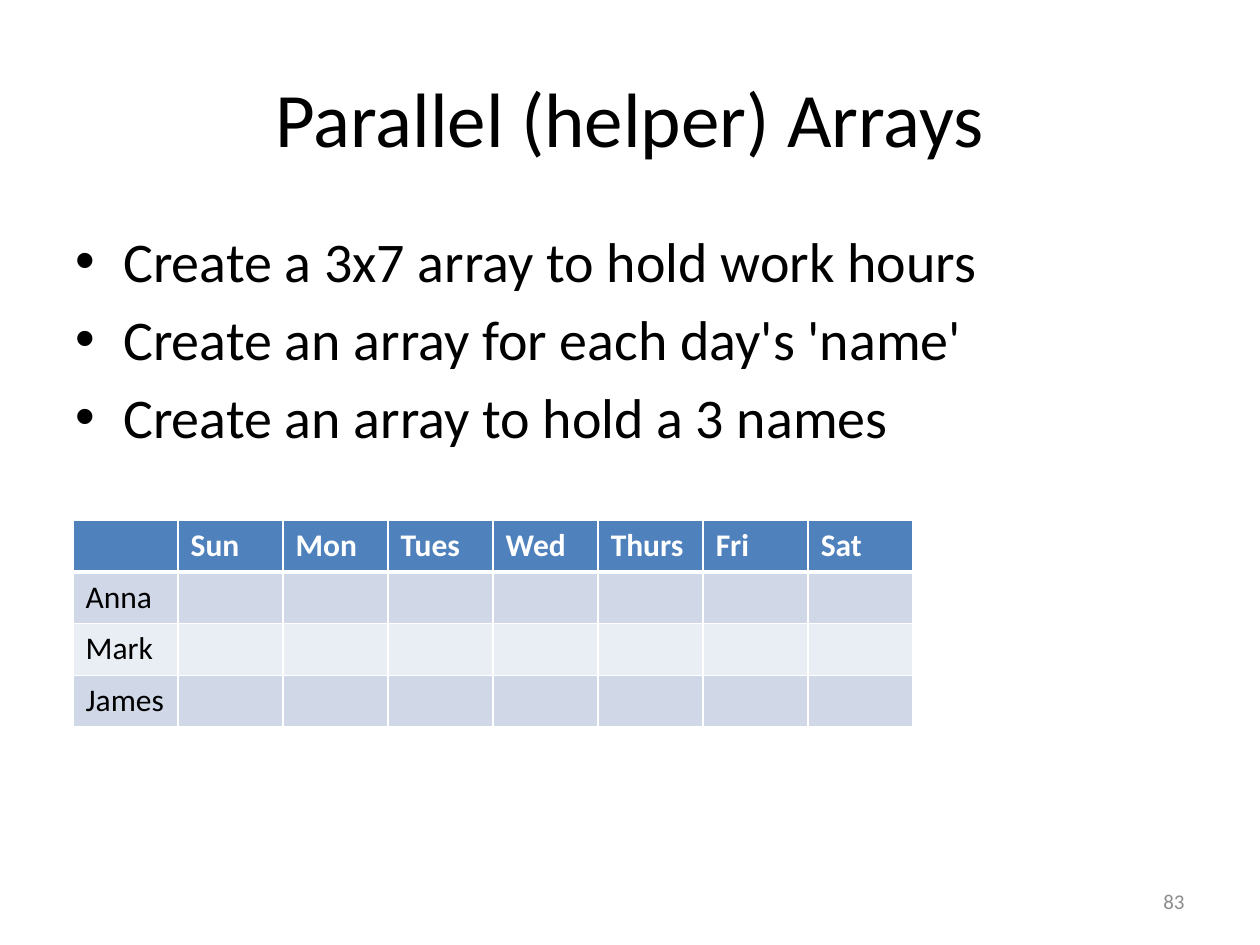
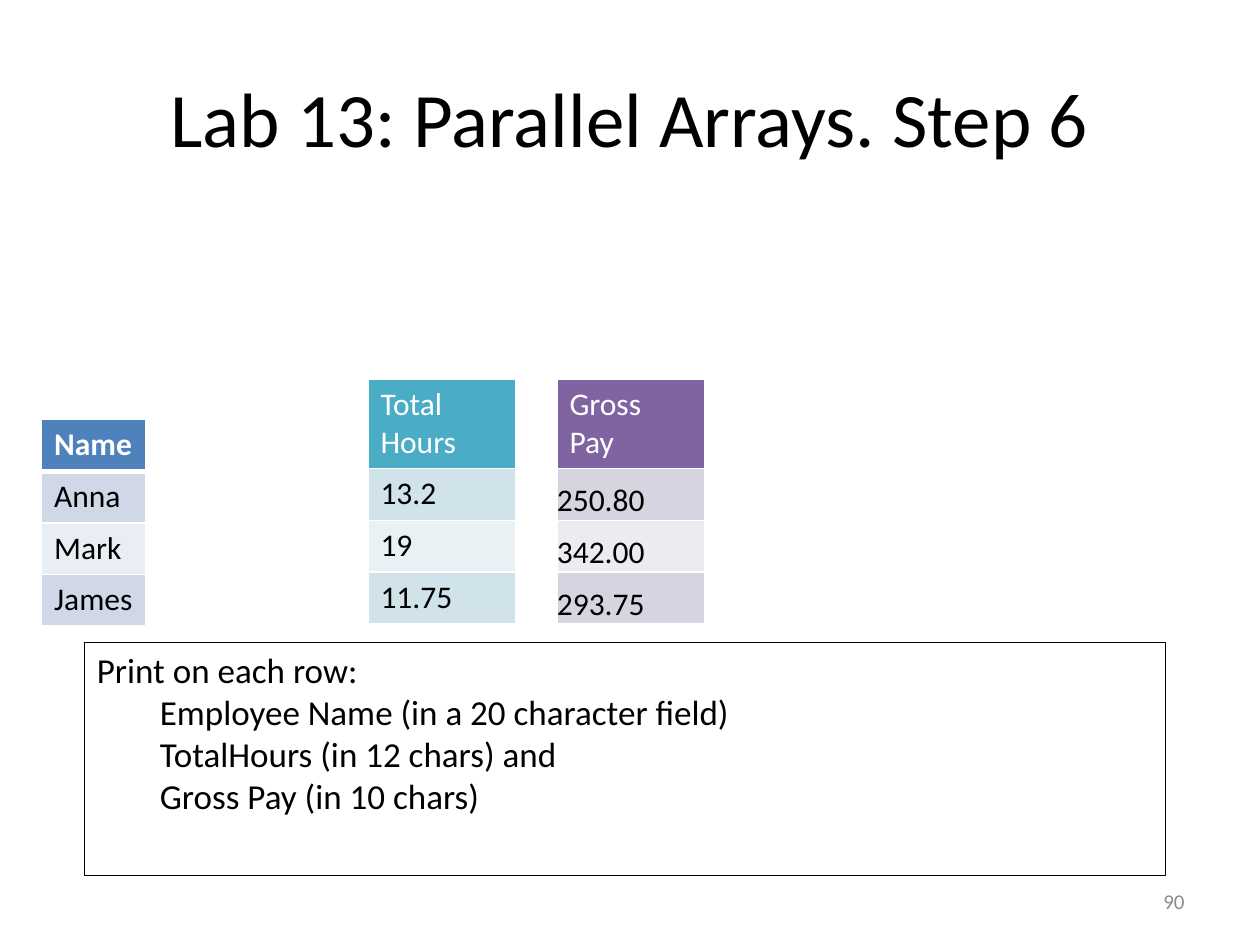
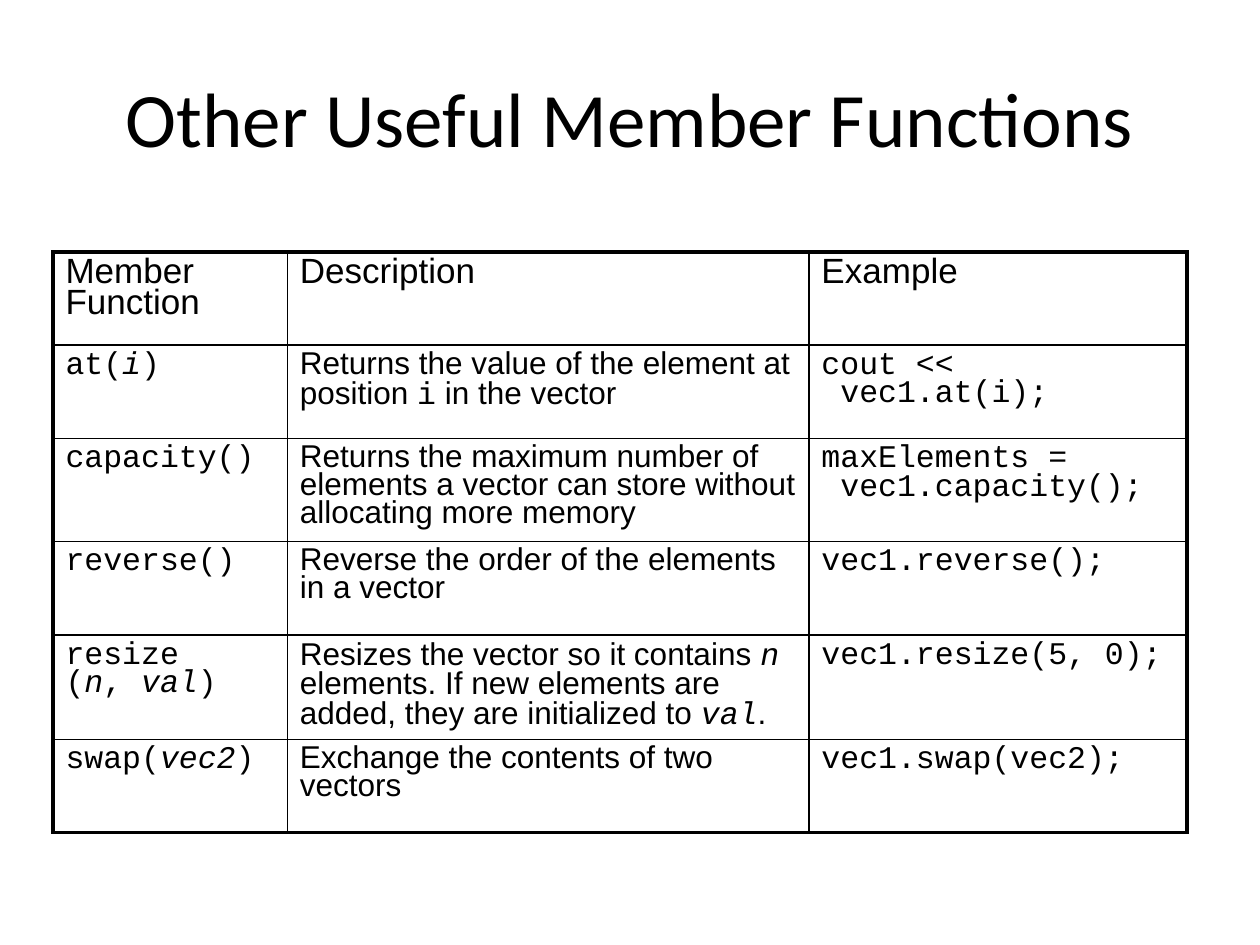
import dataclasses

import pptx
import pptx.dml.color
import pptx.enum.shapes
import pptx.enum.text
import pptx.oxml
import pptx.oxml.ns
import pptx.util
from pptx.util import Inches

ALIGN = pptx.enum.text.PP_ALIGN
ANCHOR = pptx.enum.text.MSO_ANCHOR


@dataclasses.dataclass(frozen=True)
class Box:
    """A rectangle in inches."""
    left: float
    top: float
    width: float
    height: float

    def lengths(self):
        """Return the four sides as lengths."""
        return [Inches(side) for side in (self.left, self.top, self.width, self.height)]


@dataclasses.dataclass(frozen=True)
class Palette:
    """Fills for the header and the alternating rows of a table."""
    header: str
    odd: str
    even: str


@dataclasses.dataclass(frozen=True)
class Theme:
    """Colours, fonts and type sizes of the presentation."""
    ink: str = "000000"
    paper: str = "FFFFFF"
    muted: str = "8C8C8C"
    font: str = "Calibri"
    prose_font: str = "Arial"
    code_font: str = "Courier New"
    title_size: float = 44
    bullet_size: float = 32
    note_size: float = 20
    heading_size: float = 20
    table_size: float = 18
    number_size: float = 12
    blue: Palette = Palette("4F81BD", "D0D8E8", "E9EDF4")
    teal: Palette = Palette("4BACC6", "D0E3EA", "E9F1F5")
    purple: Palette = Palette("8064A2", "D8D3E0", "EDEAF0")
    thin_line: float = 1
    header_line: float = 3
    frame_line: float = 2.25
    note_line: float = 0.75


THEME = Theme()
TITLE_BOX = Box(0.5, 0.3, 9, 1.25)
NUMBER_BOX = Box(7.17, 6.95, 2.33, 0.4)
ROW_HEIGHT = 0.41
NAMES = ["Anna", "Mark", "James"]
DAYS = ["Sun", "Mon", "Tues", "Wed", "Thurs", "Fri", "Sat"]


def color(value):
    """Turn a hexadecimal value into a colour."""
    return pptx.dml.color.RGBColor.from_string(value)


def format_run(run, size, ink=THEME.ink, font=THEME.font, bold=False, italic=False):
    """Set the font of a run."""
    run.font.size = pptx.util.Pt(size)
    run.font.name = font
    run.font.bold = bold
    run.font.italic = italic
    run.font.color.rgb = color(ink)


def write_lines(text_frame, lines, size, ink=THEME.ink, bold=False):
    """Write one paragraph for each line and return the paragraphs."""
    text_frame.word_wrap = True
    text_frame.text = "\n".join(lines)
    for paragraph in text_frame.paragraphs:
        for run in paragraph.runs:
            format_run(run, size, ink, bold=bold)
    return text_frame.paragraphs


def indent(paragraph, left, first=0):
    """Set the left margin and first-line indent of a paragraph."""
    properties = paragraph._p.get_or_add_pPr()
    properties.set("marL", str(Inches(left)))
    properties.set("indent", str(Inches(first)))
    return properties


def add_titled_slide(presentation, title, number=None):
    """Add a slide with its title and, if given, its number."""
    slide = presentation.slides.add_slide(presentation.slide_layouts[5])
    shape = slide.shapes.title
    shape.left, shape.top, shape.width, shape.height = TITLE_BOX.lengths()
    shape.text_frame.vertical_anchor = ANCHOR.MIDDLE
    write_lines(shape.text_frame, [title], THEME.title_size)[0].alignment = ALIGN.CENTER
    if number is not None:
        shape = slide.shapes.add_textbox(*NUMBER_BOX.lengths())
        shape.text_frame.vertical_anchor = ANCHOR.MIDDLE
        paragraphs = write_lines(
            shape.text_frame, [str(number)], THEME.number_size, THEME.muted)
        paragraphs[0].alignment = ALIGN.RIGHT
    return slide


def add_bullets(slide, box, lines):
    """Add a bulleted list."""
    shape = slide.shapes.add_textbox(*box.lengths())
    for paragraph in write_lines(shape.text_frame, lines, THEME.bullet_size):
        paragraph.space_before = pptx.util.Pt(6)
        properties = indent(paragraph, 0.38, -0.38)
        for tag, name, value in (("a:buFont", "typeface", "Arial"), ("a:buChar", "char", "•")):
            bullet = pptx.oxml.ns.qn(tag)
            properties.makeelement(bullet, {})
            properties.append(properties.makeelement(bullet, {name: value}))


def add_note(slide, box, heading, items):
    """Add an outlined box with a heading and indented items."""
    shape = slide.shapes.add_shape(
        pptx.enum.shapes.MSO_SHAPE.RECTANGLE, *box.lengths())
    shape.shadow.inherit = False
    shape.fill.background()
    shape.line.color.rgb = color(THEME.ink)
    shape.line.width = pptx.util.Pt(THEME.note_line)
    shape.text_frame.vertical_anchor = ANCHOR.TOP
    paragraphs = write_lines(shape.text_frame, [heading, *items], THEME.note_size)
    for position, paragraph in enumerate(paragraphs):
        paragraph.alignment = ALIGN.LEFT
        indent(paragraph, 0.5 if position else 0)


def set_borders(cell, ink, left, right, top, bottom):
    """Draw the four borders of a cell with the given widths in points."""
    properties = cell._tc.get_or_add_tcPr()
    for side, width in zip("LRTB", (left, right, top, bottom)):
        properties.append(pptx.oxml.parse_xml(
            f'<a:ln{side} {pptx.oxml.ns.nsdecls("a")} w="{pptx.util.Pt(width)}">'
            f'<a:solidFill><a:srgbClr val="{ink}"/></a:solidFill></a:ln{side}>'))


def add_plain_table(slide, box, column_widths, row_heights):
    """Add a table with the given column widths and row heights."""
    frame = slide.shapes.add_table(
        len(row_heights), len(column_widths), *box.lengths())
    table = frame.table
    table.first_row = table.horz_banding = False
    for column, width in zip(table.columns, column_widths):
        column.width = Inches(width)
    for row, height in zip(table.rows, row_heights):
        row.height = Inches(height)
    return table


def add_banded_table(slide, box, rows, palette, bold_header=False, flush=False):
    """Add a table with a coloured header over alternating rows."""
    columns = len(rows[0])
    body_rows = len(rows) - 1
    header_height = box.height - body_rows * ROW_HEIGHT
    table = add_plain_table(slide, box, [box.width / columns] * columns,
                            [header_height] + [ROW_HEIGHT] * body_rows)
    rule = THEME.header_line if bold_header else THEME.thin_line
    thin = THEME.thin_line
    for row, texts in enumerate(rows):
        is_header = row == 0
        fill = palette.header if is_header else palette.odd if row % 2 else palette.even
        for column, text in enumerate(texts):
            cell = table.cell(row, column)
            set_borders(cell, THEME.paper, thin, thin,
                        rule if row == 1 else thin, rule if is_header else thin)
            cell.fill.solid()
            cell.fill.fore_color.rgb = color(fill)
            write_lines(cell.text_frame, [text], THEME.table_size,
                        THEME.paper if is_header else THEME.ink,
                        is_header and bold_header)
            if flush and not is_header:
                cell.vertical_anchor = ANCHOR.BOTTOM
                cell.margin_left = cell.margin_right = 0
                cell.margin_top = cell.margin_bottom = 0


def heading(text):
    """Describe a run of a column heading."""
    return text, {"size": THEME.heading_size, "font": THEME.prose_font}


def prose(text):
    """Describe a run of plain explanation."""
    return text, {"size": THEME.table_size, "font": THEME.prose_font}


def code(text):
    """Describe a run of code."""
    return text, {"size": THEME.table_size, "font": THEME.code_font}


def variable(text):
    """Describe a run of code that names a variable."""
    return text, {**code(text)[1], "italic": True}


def add_reference_table(slide, box, column_shares, row_heights, rows):
    """Add a framed grid whose cells hold paragraphs of formatted runs."""
    widths = [box.width * share / sum(column_shares) for share in column_shares]
    table = add_plain_table(slide, box, widths, row_heights)
    last_row, last_column = len(row_heights) - 1, len(widths) - 1
    for row, cells in enumerate(rows):
        for column, paragraphs in enumerate(cells):
            cell = table.cell(row, column)
            on_frame = (column == 0, column == last_column, row == 0, row == last_row)
            set_borders(cell, THEME.ink, *(
                THEME.frame_line if outer else THEME.thin_line for outer in on_frame))
            cell.fill.background()
            for position, runs in enumerate(paragraphs):
                text_frame = cell.text_frame
                paragraph = text_frame.add_paragraph() if position else text_frame.paragraphs[0]
                paragraph.line_spacing = 0.8
                for text, style in runs:
                    run = paragraph.add_run()
                    run.text = text
                    format_run(run, **style)


def build_helper_arrays(presentation):
    """Build the slide on parallel helper arrays."""
    slide = add_titled_slide(presentation, "Parallel (helper) Arrays", 83)
    add_bullets(slide, Box(0.5, 1.75, 9, 4.95), [
        "Create a 3x7 array to hold work hours",
        "Create an array for each day's 'name'",
        "Create an array to hold a 3 names",
    ])
    rows = [["", *DAYS]] + [[name] + [""] * len(DAYS) for name in NAMES]
    add_banded_table(slide, Box(0.58, 4.13, 6.67, 1.64), rows, THEME.blue, bold_header=True)


def build_lab_step(presentation):
    """Build the slide on step 6 of the lab."""
    slide = add_titled_slide(presentation, "Lab 13: Parallel Arrays. Step 6", 90)
    add_banded_table(slide, Box(0.33, 3.33, 0.83, 1.64),
                     [["Name"]] + [[name] for name in NAMES], THEME.blue, bold_header=True)
    add_banded_table(slide, Box(2.92, 3.01, 1.17, 1.94),
                     [["Total Hours"], ["13.2"], ["19"], ["11.75"]], THEME.teal)
    add_banded_table(slide, Box(4.42, 3.01, 1.17, 1.94),
                     [["Gross Pay"], ["250.80"], ["342.00"], ["293.75"]],
                     THEME.purple, flush=True)
    add_note(slide, Box(0.67, 5.1, 8.58, 1.85), "Print on each row:", [
        "Employee Name (in a 20 character field)",
        "TotalHours (in 12 chars) and",
        "Gross Pay (in 10 chars)",
    ])


def build_member_functions(presentation):
    """Build the slide on member functions of a vector."""
    slide = add_titled_slide(presentation, "Other Useful Member Functions")
    rows = [
        [[[heading("Member")], [heading("Function")]],
         [[heading("Description")]],
         [[heading("Example")]]],
        [[[code("at("), variable("i"), code(")")]],
         [[prose("Returns the value of the element at position "), code("i"),
           prose(" in the vector")]],
         [[code("cout <<")], [code(" vec1.at(i);")]]],
        [[[code("capacity()")]],
         [[prose("Returns the maximum number of elements a vector can store "
                 "without allocating more memory")]],
         [[code("maxElements =")], [code(" vec1.capacity();")]]],
        [[[code("reverse()")]],
         [[prose("Reverse the order of the elements in a vector")]],
         [[code("vec1.reverse();")]]],
        [[[code("resize")],
          [code("("), variable("n"), code(", "), variable("val"), code(")")]],
         [[prose("Resizes the vector so it contains "), variable("n"),
           prose(" elements. If new elements are added, they are initialized to "),
           variable("val"), prose(".")]],
         [[code("vec1.resize(5, 0);")]]],
        [[[code("swap("), variable("vec2"), code(")")]],
         [[prose("Exchange the contents of two vectors")]],
         [[code("vec1.swap(vec2);")]]],
    ]
    add_reference_table(slide, Box(0.42, 2, 9, 4.61), [1.86, 4.14, 3],
                        [0.74, 0.74, 0.82, 0.74, 0.83, 0.74], rows)


def main():
    """Build the presentation and save it."""
    presentation = pptx.Presentation()
    presentation.slide_width, presentation.slide_height = Inches(10), Inches(7.5)
    build_helper_arrays(presentation)
    build_lab_step(presentation)
    build_member_functions(presentation)
    presentation.save("out.pptx")


if __name__ == "__main__":
    main()
